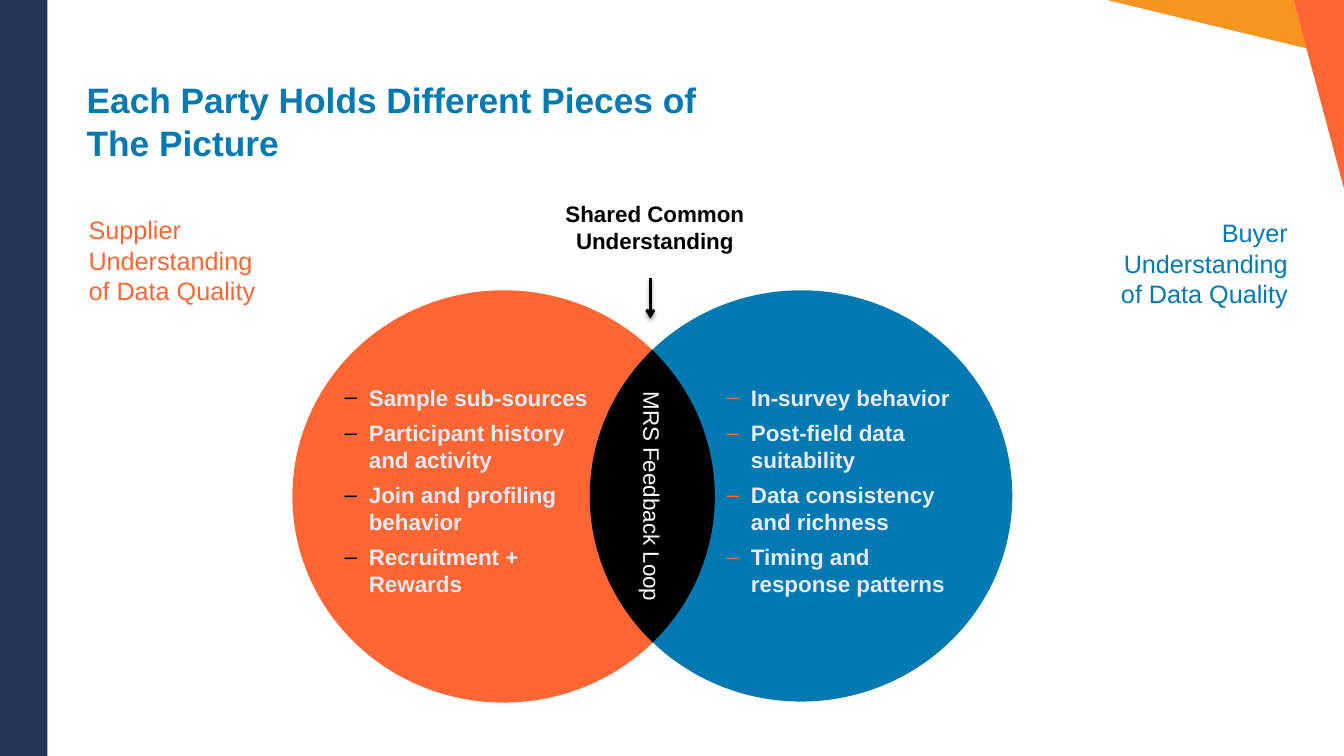
import math

from lxml import etree
from pptx import Presentation
from pptx.dml.color import RGBColor
from pptx.enum import shapes, text
from pptx.oxml import ns
from pptx.util import Inches, Pt

COLOURS = {
    "navy": "233653",
    "amber": "F79520",
    "orange": "FF6633",
    "blue": "0279B3",
    "black": "000000",
    "white": "FFFFFF",
    "pale": "E5EBF4",
}
SUPPLIER_CIRCLE = (2.9, 2.88, 4.19, 4.09)
BUYER_CIRCLE = (5.85, 2.88, 4.19, 4.08)
SUPPLIER_ITEMS = [
    "Sample sub-sources",
    "Participant history and activity",
    "Join and profiling behavior",
    "Recruitment + Rewards",
]
BUYER_ITEMS = [
    "In-survey behavior",
    "Post-field data suitability",
    "Data consistency and richness",
    "Timing and response patterns",
]


def colour(name):
    return RGBColor.from_string(COLOURS[name])


def add_xml(parent, tag, **values):
    child = etree.SubElement(parent, ns.qn(tag))
    for key, value in values.items():
        child.set(key, str(value))
    return child


def paint(shape, fill):
    shape.shadow.inherit = False
    shape.fill.solid()
    shape.fill.fore_color.rgb = colour(fill)
    shape.line.fill.background()


def add_preset(page, kind, place, fill):
    shape = page.shapes.add_shape(kind, *map(Inches, place))
    paint(shape, fill)


def add_outline(page, points, fill):
    corners = [(Inches(x), Inches(y)) for x, y in points]
    builder = page.shapes.build_freeform(*corners[0])
    builder.add_line_segments(corners[1:])
    shape = builder.convert_to_shape()
    paint(shape, fill)
    return shape


def write(para, words, size, fill, bold=False):
    span = para.add_run()
    span.text = words
    span.font.color.rgb = colour(fill)
    for name, value in {"name": "Arial", "size": Pt(size), "bold": bold}.items():
        setattr(span.font, name, value)


def add_box(page, place):
    box = page.shapes.add_textbox(*map(Inches, place))
    box.text_frame.word_wrap = True
    return box.text_frame


def add_label(page, place, words, size, fill, align, bold=False):
    para = add_box(page, place).paragraphs[0]
    para.alignment = align
    write(para, words, size, fill, bold)


def add_dash_list(page, place, items, dash_fill):
    frame = add_box(page, place)
    for index, item in enumerate(items):
        para = frame.add_paragraph() if index else frame.paragraphs[0]
        para.space_after = Pt(6)
        props = para._p.get_or_add_pPr()
        props.set("marL", str(Inches(0.24)))
        props.set("indent", str(-Inches(0.24)))
        add_xml(add_xml(props, "a:buClr"), "a:srgbClr", val=COLOURS[dash_fill])
        add_xml(props, "a:buFont", typeface="Arial")
        add_xml(props, "a:buChar", char="–")
        write(para, item, 16, "pale", bold=True)


def arc(circle, start, end, steps=48):
    """Points along a circle's edge between two angles in radians."""
    left, top, width, height = circle
    angles = [start + (end - start) * step / steps for step in range(steps + 1)]
    return [
        (left + width / 2 * (1 + math.cos(angle)), top + height / 2 * (1 + math.sin(angle)))
        for angle in angles
    ]


def add_overlap(page):
    """Fill the lens shared by both circles and write down its length."""
    half = math.acos((BUYER_CIRCLE[0] - SUPPLIER_CIRCLE[0]) / SUPPLIER_CIRCLE[2])
    points = arc(SUPPLIER_CIRCLE, -half, half)
    points += arc(BUYER_CIRCLE, math.pi - half, math.pi + half)
    lens = add_outline(page, points, "black")
    frame = lens.text_frame
    frame.word_wrap = True
    frame.vertical_anchor = text.MSO_ANCHOR.MIDDLE
    lens.element.txBody.bodyPr.set("vert", "vert")
    para = frame.paragraphs[0]
    para.alignment = text.PP_ALIGN.CENTER
    write(para, "MRS Feedback Loop", 16, "white")


def add_arrow(page, start, end):
    arrow = page.shapes.add_connector(
        shapes.MSO_CONNECTOR.STRAIGHT, *map(Inches, start + end)
    )
    arrow.line.width = Pt(2)
    arrow.line.color.rgb = colour("black")
    props = arrow.element.spPr
    add_xml(props.find(ns.qn("a:ln")), "a:tailEnd", type="arrow")
    shadow = add_xml(
        add_xml(props, "a:effectLst"), "a:outerShdw",
        blurRad=Pt(3.1), dist=Pt(1.6), dir=90 * 60000, rotWithShape=0,
    )
    shade = add_xml(shadow, "a:srgbClr", val=COLOURS["black"])
    add_xml(shade, "a:alpha", val=38000)


def set_title(page, words):
    title = page.shapes.title
    place = {"left": 0.86, "top": 0.86, "width": 6.71, "height": 0.76}
    for name, value in place.items():
        setattr(title, name, Inches(value))
    frame = title.text_frame
    layout = {
        "margin_left": 0, "margin_top": 0, "margin_right": 0, "margin_bottom": 0,
        "word_wrap": True,
        "auto_size": text.MSO_AUTO_SIZE.NONE,
        "vertical_anchor": text.MSO_ANCHOR.BOTTOM,
    }
    for name, value in layout.items():
        setattr(frame, name, value)
    para = frame.paragraphs[0]
    para.alignment = text.PP_ALIGN.LEFT
    write(para, words, 25.2, "blue", bold=True)


def main():
    deck = Presentation()
    deck.slide_width, deck.slide_height = Inches(13.33), Inches(7.5)
    page = deck.slides.add_slide(deck.slide_layouts[5])
    kinds, align = shapes.MSO_SHAPE, text.PP_ALIGN

    add_outline(page, [(10.98, 0), (12.83, 0), (12.96, 0.48)], "amber")
    add_outline(page, [(12.83, 0), (13.33, 0), (13.33, 1.87)], "orange")
    add_preset(page, kinds.RECTANGLE, (0, 0, 0.47, 7.5), "navy")
    set_title(page, "Each Party Holds Different Pieces of The Picture")

    add_preset(page, kinds.OVAL, SUPPLIER_CIRCLE, "orange")
    add_preset(page, kinds.OVAL, BUYER_CIRCLE, "blue")
    add_overlap(page)
    add_arrow(page, (6.45, 2.76), (6.45, 3.16))
    add_label(page, (5.37, 1.94, 2.25, 0.64), "Shared Common Understanding",
              16, "black", align.CENTER, bold=True)
    add_dash_list(page, (3.32, 3.76, 2.79, 2.24), SUPPLIER_ITEMS, "black")
    add_dash_list(page, (7.11, 3.76, 2.44, 2.24), BUYER_ITEMS, "orange")
    add_label(page, (0.78, 2.08, 2.04, 1.01),
              "Supplier Understanding of Data Quality", 18, "orange", align.LEFT)
    add_label(page, (10.83, 2.11, 2.04, 1.01),
              "Buyer Understanding of Data Quality", 18, "blue", align.RIGHT)
    deck.save("out.pptx")


if __name__ == "__main__":
    main()
